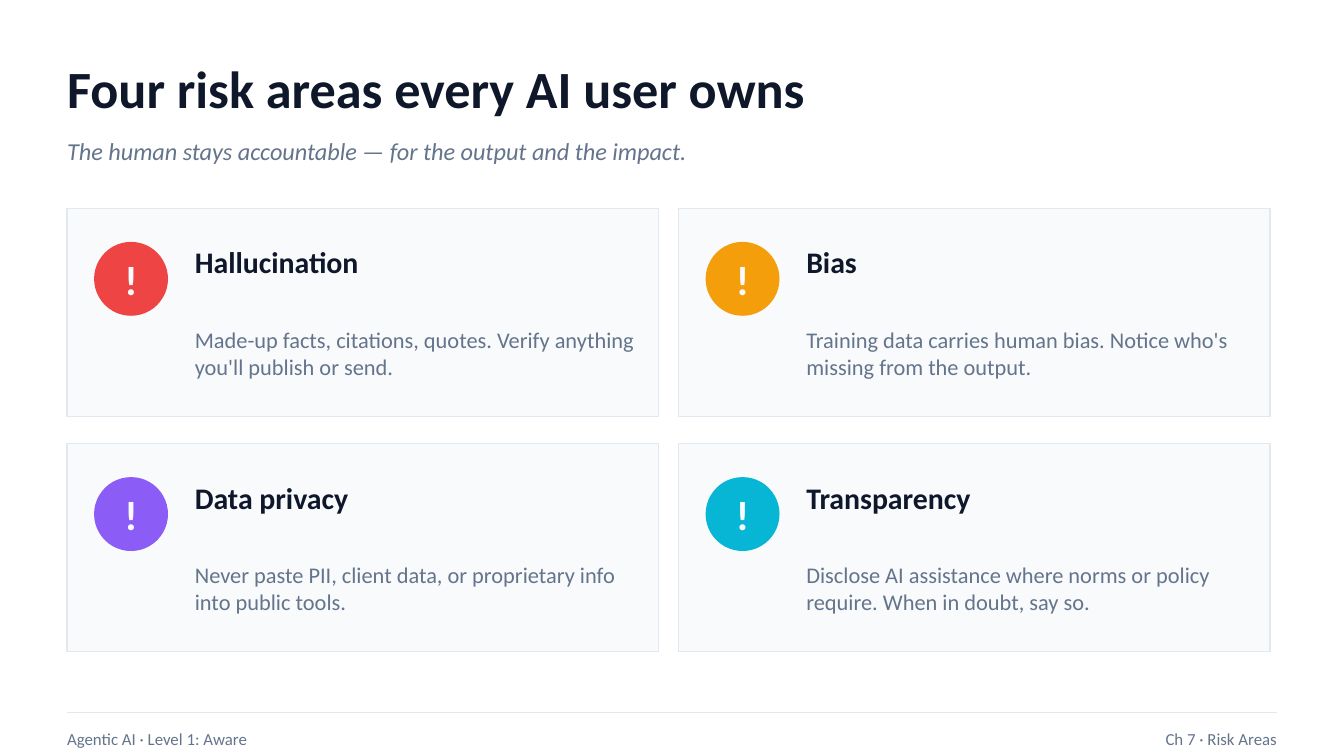
import pptx
import pptx.dml.color
import pptx.enum.shapes
import pptx.enum.text
import pptx.oxml.ns
import pptx.util
from lxml import etree

Pt = pptx.util.Pt
SHAPES = pptx.enum.shapes.MSO_SHAPE
ALIGN = pptx.enum.text.PP_ALIGN

COLORS = {
    "ink": "0F172A", "muted": "64748B", "panel": "F8FAFC", "border": "E2E8F0",
    "red": "EF4444", "amber": "F59E0B", "violet": "8B5CF6", "cyan": "06B6D4",
}
FORMATS = {
    "title": {"size": Pt(28), "bold": True, "color": "ink"},
    "subtitle": {"size": Pt(13), "italic": True, "color": "muted"},
    "icon": {"size": Pt(22), "bold": True, "color": "panel"},
    "heading": {"size": Pt(16), "bold": True, "color": "ink"},
    "body": {"size": Pt(12), "color": "muted"},
    "footer": {"size": Pt(9), "color": "muted"},
}

presentation = pptx.Presentation()
presentation.slide_width, presentation.slide_height = Pt(720), Pt(405)
slide = presentation.slides.add_slide(presentation.slide_layouts[6])


def rgb(name):
    return pptx.dml.color.RGBColor.from_string(COLORS[name])


def add_text(text, left, top, width, height, style, align=ALIGN.LEFT):
    box = slide.shapes.add_textbox(Pt(left), Pt(top), Pt(width), Pt(height))
    frame = box.text_frame
    frame.word_wrap = True
    frame.vertical_anchor = pptx.enum.text.MSO_ANCHOR.MIDDLE
    for side in ("left", "top", "right", "bottom"):
        setattr(frame, f"margin_{side}", 0)
    paragraph = frame.paragraphs[0]
    paragraph.alignment = align
    run = paragraph.add_run()
    run.text = text
    run.font.name = "Calibri"
    for attribute, value in FORMATS[style].items():
        if attribute == "color":
            run.font.color.rgb = rgb(value)
        else:
            setattr(run.font, attribute, value)


# Title and subtitle
add_text("Four risk areas every AI user owns", 36, 25.2, 648, 43.2, "title")
add_text("The human stays accountable — for the output and the impact.",
         36, 68.4, 648, 25.2, "subtitle")

# Risk cards, two by two
risks = [
    ("Hallucination", "red",
     "Made-up facts, citations, quotes. Verify anything you'll publish or send."),
    ("Bias", "amber",
     "Training data carries human bias. Notice who's missing from the output."),
    ("Data privacy", "violet",
     "Never paste PII, client data, or proprietary info into public tools."),
    ("Transparency", "cyan",
     "Disclose AI assistance where norms or policy require. When in doubt, say so."),
]
for index, (heading, accent, description) in enumerate(risks):
    row, column = divmod(index, 2)
    left = 36 + column * 327.6
    top = 111.6 + row * 126
    icon_area = (left + 14.4, top + 18, 39.6, 39.6)

    card = slide.shapes.add_shape(
        SHAPES.RECTANGLE, Pt(left), Pt(top), Pt(316.8), Pt(111.6))
    card.line.color.rgb = rgb("border")
    card.line.width = Pt(0.75)
    circle = slide.shapes.add_shape(SHAPES.OVAL, *map(Pt, icon_area))
    circle.line.fill.background()
    for shape, fill in ((card, "panel"), (circle, accent)):
        shape.shadow.inherit = False
        shape.fill.solid()
        shape.fill.fore_color.rgb = rgb(fill)

    add_text("!", *icon_area, "icon", ALIGN.CENTER)
    add_text(heading, left + 68.4, top + 14.4, 237.6, 28.8, "heading")
    add_text(description, left + 68.4, top + 46.8, 237.6, 61.2, "body")

# Footer rule and labels
rule = slide.shapes.add_connector(
    pptx.enum.shapes.MSO_CONNECTOR.STRAIGHT, Pt(36), Pt(381.6), Pt(684), Pt(381.6))
rule.line.color.rgb = rgb("border")
rule.line.width = Pt(0.75)
etree.SubElement(rule._element.spPr, pptx.oxml.ns.qn("a:effectLst"))
add_text("Agentic AI · Level 1: Aware", 36, 385.2, 360, 21.6, "footer")
add_text("Ch 7 · Risk Areas", 396, 385.2, 288, 21.6, "footer", ALIGN.RIGHT)

presentation.save("out.pptx")
